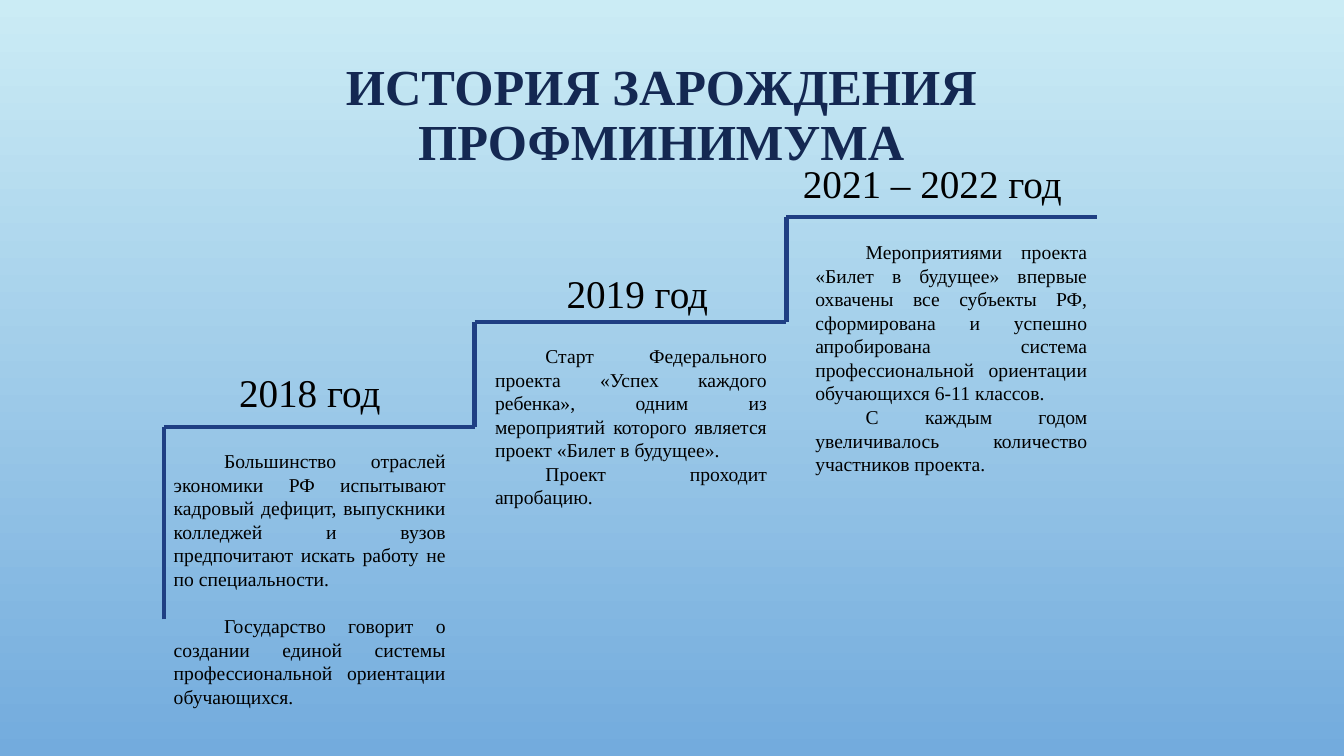
"""Build the slide on the history of the career guidance minimum."""
from itertools import pairwise

from lxml.etree import SubElement
from pptx import Presentation
from pptx.dml.color import RGBColor
from pptx.enum.shapes import MSO_CONNECTOR
from pptx.enum.text import MSO_ANCHOR, MSO_AUTO_SIZE, PP_ALIGN
from pptx.oxml.ns import qn
from pptx.util import Pt

PX = 9525
SKY = RGBColor(0xCB, 0xEC, 0xF5)
BLUE = RGBColor(0x73, 0xAB, 0xDD)
NAVY = RGBColor(0x14, 0x28, 0x52)
STEP = RGBColor(0x1F, 0x3F, 0x83)
BLACK = RGBColor(0, 0, 0)
BOX_W, HEAD_H, INDENT = 278, 55, 48


def write(tf, *texts, size, color=BLACK, bold=False, align=PP_ALIGN.CENTER,
          indent=0, gap=0, spacing=None):
    """Fill a text frame with one paragraph per text."""
    tf.word_wrap = True
    for i, text in enumerate(texts):
        p = tf.add_paragraph() if i else tf.paragraphs[0]
        p.alignment = align
        if spacing:
            p.line_spacing = spacing
        if i and gap:
            p.space_before = Pt(gap)
        if indent:
            p._p.get_or_add_pPr().set("indent", str(indent * PX))
        r = p.add_run()
        r.text = text
        r.font.name = "Times New Roman"
        r.font.size = Pt(size)
        r.font.bold = bold
        r.font.color.rgb = color


prs = Presentation()
prs.slide_width, prs.slide_height = 1280 * PX, 720 * PX
s = prs.slides.add_slide(prs.slide_layouts[5])

fill = s.background.fill
fill.gradient()
fill.gradient_angle = 270
for stop, color in zip(fill.gradient_stops, (SKY, BLUE)):
    stop.color.rgb = color

title = s.shapes.title
title.left, title.top, title.width, title.height = (v * PX for v in (86, 27, 1088, 168))
title.text_frame.vertical_anchor = MSO_ANCHOR.MIDDLE
title.text_frame.auto_size = MSO_AUTO_SIZE.NONE
write(title.text_frame, "ИСТОРИЯ ЗАРОЖДЕНИЯ ПРОФМИНИМУМА",
      size=36, color=NAVY, bold=True, spacing=0.9)

corners = [(156, 590), (156, 407), (452, 407), (452, 307),
           (749, 307), (749, 207), (1045, 207)]
for start, end in pairwise(corners):
    line = s.shapes.add_connector(MSO_CONNECTOR.STRAIGHT, *(v * PX for v in start + end))
    line.line.color.rgb = STEP
    line.line.width = Pt(3)
    SubElement(line._element.spPr, qn("a:effectLst"))

stages = [
    ("2018 год", (156, 346), (156, 423, 258), 17, [
        "Большинство отраслей экономики РФ испытывают кадровый дефицит, выпускники "
        "колледжей и вузов предпочитают искать работу не по специальности.",
        "Государство говорит о создании единой системы профессиональной ориентации "
        "обучающихся."]),
    ("2019 год", (468, 252), (462, 323, 168), 0, [
        "Старт Федерального проекта «Успех каждого ребенка», одним из мероприятий "
        "которого является проект «Билет в будущее».",
        "Проект проходит апробацию."]),
    ("2021 – 2022 год", (749, 147), (767, 224, 236), 0, [
        "Мероприятиями проекта «Билет в будущее» впервые охвачены все субъекты РФ, "
        "сформирована и успешно апробирована система профессиональной ориентации "
        "обучающихся 6-11 классов.",
        "С каждым годом увеличивалось количество участников проекта."]),
]
for year, (head_x, head_y), (x, y, h), gap, texts in stages:
    head = s.shapes.add_textbox(head_x * PX, head_y * PX, BOX_W * PX, HEAD_H * PX)
    write(head.text_frame, year, size=28)
    body = s.shapes.add_textbox(x * PX, y * PX, BOX_W * PX, h * PX)
    write(body.text_frame, *texts, size=14, align=PP_ALIGN.JUSTIFY,
          indent=INDENT, gap=gap)
    for box in (head, body):
        box.text_frame.auto_size = MSO_AUTO_SIZE.SHAPE_TO_FIT_TEXT

prs.save("out.pptx")
